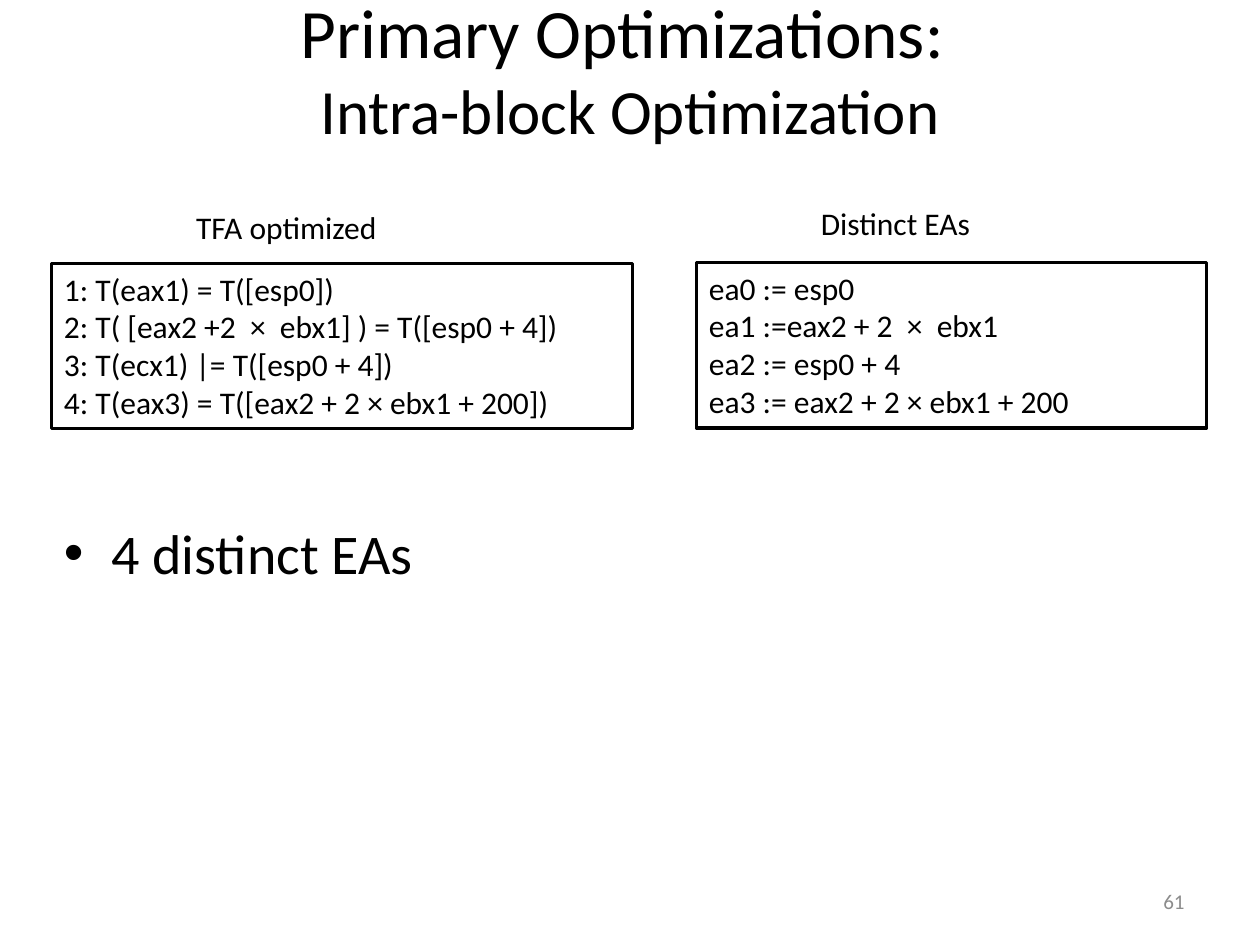
from copy import deepcopy
from dataclasses import dataclass

from lxml import etree
from pptx import Presentation
from pptx import util as u
from pptx.dml.color import RGBColor
from pptx.enum import shapes, text
from pptx.oxml.ns import qn

Pt = u.Pt


@dataclass(frozen=True)
class Theme:
    font: str = "Calibri"
    ink: RGBColor = RGBColor(0x00, 0x00, 0x00)
    paper: RGBColor = RGBColor(0xFF, 0xFF, 0xFF)
    muted: RGBColor = RGBColor(0x8C, 0x8C, 0x8C)
    title: float = 39.6
    subtitle: float = 36
    bullet: float = 32
    code: float = 18
    number: float = 12


THEME = Theme()


def add_run(paragraph, words, size, color=THEME.ink):
    run = paragraph.add_run()
    run.text = words
    run.font.name = THEME.font
    run.font.size = Pt(size)
    run.font.color.rgb = color
    return run


def add_label(container, box, words, size, color=THEME.ink, wrap=True):
    label = container.add_textbox(*map(Pt, box))
    frame = label.text_frame
    frame.word_wrap = wrap
    paragraph = frame.paragraphs[0]
    add_run(paragraph, words, size, color)
    return frame, paragraph


def set_title(slide, heading, subheading):
    title = slide.shapes.title
    title.left, title.top, title.width, title.height = map(Pt, (36, -6, 648, 90))
    frame = title.text_frame
    frame.auto_size = text.MSO_AUTO_SIZE.NONE
    frame.vertical_anchor = text.MSO_ANCHOR.MIDDLE
    paragraph = frame.paragraphs[0]
    paragraph.alignment = text.PP_ALIGN.CENTER
    first = add_run(paragraph, heading, THEME.title)
    paragraph.add_line_break()
    paragraph._p[-1].append(deepcopy(first._r.rPr))
    add_run(paragraph, subheading, THEME.subtitle)


def add_listing(slide, box, lines, caption, caption_box):
    group = slide.shapes.add_group_shape().shapes
    listing = group.add_shape(shapes.MSO_SHAPE.RECTANGLE, *map(Pt, box))
    listing.shadow.inherit = False
    listing.fill.solid()
    listing.fill.fore_color.rgb = THEME.paper
    listing.line.color.rgb = THEME.ink
    listing.line.width = Pt(2)
    frame = listing.text_frame
    frame.word_wrap = True
    frame.vertical_anchor = text.MSO_ANCHOR.TOP
    for index, line in enumerate(lines):
        paragraph = frame.add_paragraph() if index else frame.paragraphs[0]
        paragraph.alignment = text.PP_ALIGN.LEFT
        add_run(paragraph, line, THEME.code)
    add_label(group, caption_box, caption, THEME.code, wrap=False)


def add_bullet(slide, box, words):
    _, paragraph = add_label(slide.shapes, box, words, THEME.bullet)
    paragraph.space_before = Pt(0.2 * THEME.bullet)
    properties = paragraph._p.get_or_add_pPr()
    properties.set("marL", str(Pt(27)))
    properties.set("indent", str(Pt(-27)))
    etree.SubElement(properties, qn("a:buFont"), typeface="Arial")
    etree.SubElement(properties, qn("a:buChar"), char="•")


def add_slide_number(slide, box, number):
    frame, paragraph = add_label(slide.shapes, box, number, THEME.number, THEME.muted)
    frame.vertical_anchor = text.MSO_ANCHOR.MIDDLE
    paragraph.alignment = text.PP_ALIGN.RIGHT


def main():
    deck = Presentation()
    deck.slide_width, deck.slide_height = Pt(720), Pt(540)
    slide = deck.slides.add_slide(deck.slide_layouts[5])

    set_title(slide, "Primary Optimizations: ", "Intra-block Optimization")
    add_listing(
        slide,
        (29.5, 150.5, 332, 94.5),
        (
            "1: T(eax1) = T([esp0])",
            "2: T( [eax2 +2  ×  ebx1] ) = T([esp0 + 4])",
            "3: T(ecx1) |= T([esp0 + 4])",
            "4: T(eax3) = T([eax2 + 2 × ebx1 + 200])",
        ),
        "TFA optimized",
        (105, 115.5, 120, 29),
    )
    add_listing(
        slide,
        (398, 150, 291.5, 94.5),
        (
            "ea0 := esp0",
            "ea1 :=eax2 + 2  ×  ebx1",
            "ea2 := esp0 + 4",
            "ea3 := eax2 + 2 × ebx1 + 200",
        ),
        "Distinct EAs",
        (462, 113, 101.5, 29),
    )
    add_bullet(slide, (29.5, 292.5, 648, 111), "4 distinct EAs")
    add_slide_number(slide, (516, 500.5, 168, 28.5), "61")

    deck.save("out.pptx")


if __name__ == "__main__":
    main()
